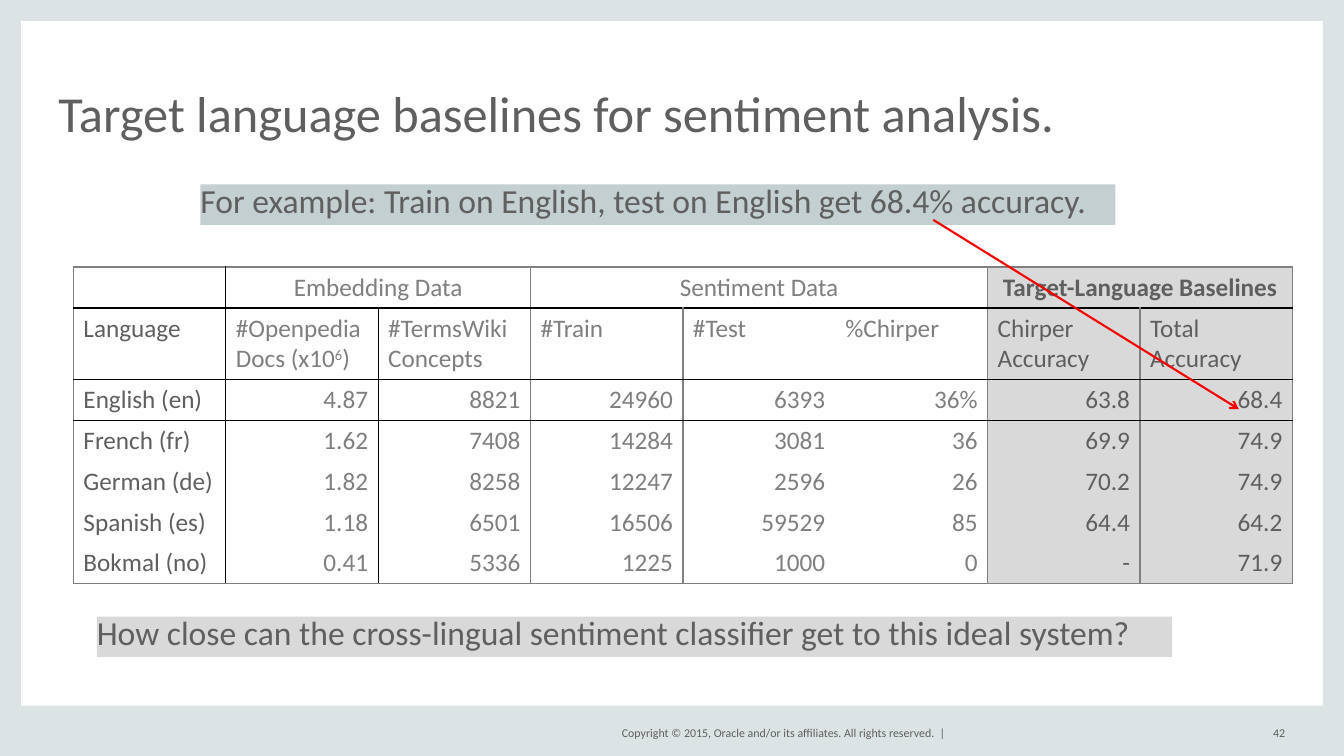
from dataclasses import dataclass
from lxml.etree import SubElement
from pptx import Presentation
from pptx.dml.color import RGBColor
from pptx.enum.shapes import MSO_CONNECTOR, MSO_SHAPE
from pptx.enum.text import MSO_ANCHOR, PP_ALIGN
from pptx.oxml import parse_xml
from pptx.oxml.ns import nsdecls, qn
from pptx.util import Cm, Pt


@dataclass
class Theme:
    font: str = "Calibri"
    frame: str = "DCE3E4"
    ink: str = "5F5F5F"
    soft: str = "7F7F7F"
    teal: str = "C3CFD0"
    shade: str = "D9D9D9"
    gray: str = "808080"
    black: str = "000000"
    red: str = "F80000"
    title: float = 36
    note: float = 24
    body: float = 18
    foot: float = 8.5


look = Theme()

WIDE, HIGH = 33.87, 19.05
EDGE, FOOT = 0.53, 1.27
TITLE = "Target language baselines for sentiment analysis."
RIGHTS = "Copyright © 2015, Oracle and/or its affiliates. All rights reserved.  |"
NUMBER = "42"
NOTES = [
    ("For example: Train on English, test on English get 68.4% accuracy.",
     (5.05, 4.65, 23.06, 1.02), look.teal),
    ("How close can the cross-lingual sentiment classifier get to this ideal system?",
     (2.44, 15.54, 27.1, 1.02), look.shade),
]
GROUPS = [("Embedding Data", 1, 2), ("Sentiment Data", 3, 5),
          ("Target-Language Baselines", 6, 7)]
HEADS = ["Language", "#Openpedia Docs (x10^6^)", "#TermsWiki Concepts", "#Train",
         "#Test", "%Chirper", "Chirper Accuracy", "Total Accuracy"]
SCORES = [
    ["English (en)", "4.87", "8821", "24960", "6393", "36%", "63.8", "68.4"],
    ["French (fr)", "1.62", "7408", "14284", "3081", "36", "69.9", "74.9"],
    ["German (de)", "1.82", "8258", "12247", "2596", "26", "70.2", "74.9"],
    ["Spanish (es)", "1.18", "6501", "16506", "59529", "85", "64.4", "64.2"],
    ["Bokmal (no)", "0.41", "5336", "1225", "1000", "0", "-", "71.9"],
]
TABLE = (1.85, 6.73)
COLUMN, ROW, TALL = 3.84, 1.03, 1.8
BASE = 6
UPRIGHT = [look.gray, look.black, look.black, look.gray, look.gray,
           None, look.gray, look.gray, look.gray]
LEVEL = [look.gray, look.black, look.black, look.black, None, None, None, look.gray]
ARROW = (23.52, 5.54, 31.22, 10.31)


def style(par, size, color, bold=False):
    for run in par.runs:
        run.font.name = look.font
        run.font.size = Pt(size)
        run.font.bold = bold
        run.font.color.rgb = RGBColor.from_string(color)


def block(slide, box, color):
    shape = slide.shapes.add_shape(MSO_SHAPE.RECTANGLE, *map(Cm, box))
    shape.shadow.inherit = False
    shape.fill.solid()
    shape.fill.fore_color.rgb = RGBColor.from_string(color)
    shape.line.fill.background()
    return shape


def write(shape, text, size, anchor, align=PP_ALIGN.LEFT, space=1.0, wrap=True):
    frame = shape.text_frame
    frame.text = text
    frame.word_wrap = wrap
    frame.vertical_anchor = anchor
    frame.margin_left = frame.margin_right = frame.margin_top = frame.margin_bottom = 0
    par = frame.paragraphs[0]
    par.alignment = align
    par.line_spacing = space
    style(par, size, look.ink)


def border(cell, sides):
    props = cell._tc.get_or_add_tcPr()
    for place, (side, color) in enumerate(sides):
        fill = (f'<a:solidFill><a:srgbClr val="{color}"/></a:solidFill>'
                if color else "<a:noFill/>")
        line = parse_xml(f'<a:ln{side} {nsdecls("a")} w="12700">{fill}</a:ln{side}>')
        props.insert(place, line)


def fill_cell(cell, text, row, col):
    par = cell.text_frame.paragraphs[0]
    for part, piece in enumerate(text.split("^")):
        if piece:
            run = par.add_run()
            run.text = piece
            if part == 1:
                run._r.get_or_add_rPr().set("baseline", "30000")
    par.font.size = Pt(look.body)
    if row == 0:
        par.alignment = PP_ALIGN.CENTER
    elif row > 1 and col > 0:
        par.alignment = PP_ALIGN.RIGHT
    color = look.soft if 0 < col < BASE else look.ink
    style(par, look.body, color, row == 0 and col == BASE)
    if col >= BASE:
        cell.fill.solid()
        cell.fill.fore_color.rgb = RGBColor.from_string(look.shade)
    else:
        cell.fill.background()


def add_scores(slide):
    top = [""] * len(HEADS)
    for name, first, last in GROUPS:
        top[first] = name
    data = [top, HEADS] + SCORES
    tall = [TALL if row == 1 else ROW for row in range(len(data))]
    grid = slide.shapes.add_table(len(data), len(HEADS), *map(Cm, TABLE),
                                  Cm(COLUMN * len(HEADS)), Cm(sum(tall))).table
    grid.first_row = grid.horz_banding = False
    for col in grid.columns:
        col.width = Cm(COLUMN)
    for row, high in zip(grid.rows, tall):
        row.height = Cm(high)
    for name, first, last in GROUPS:
        grid.cell(0, first).merge(grid.cell(0, last))
    inner = {col for name, first, last in GROUPS for col in range(first + 1, last + 1)}
    for row, texts in enumerate(data):
        walls = [None if row == 0 and col in inner else color
                 for col, color in enumerate(UPRIGHT)]
        for col, text in enumerate(texts):
            cell = grid.cell(row, col)
            fill_cell(cell, text, row, col)
            span = cell.span_width if cell.is_merge_origin else 1
            border(cell, [("L", walls[col]), ("R", walls[col + span]),
                          ("T", LEVEL[row]), ("B", LEVEL[row + 1])])


def add_arrow(slide):
    arrow = slide.shapes.add_connector(MSO_CONNECTOR.STRAIGHT, *map(Cm, ARROW))
    arrow.line.color.rgb = RGBColor.from_string(look.red)
    arrow.line.width = Pt(1.5)
    SubElement(arrow.line._get_or_add_ln(), qn("a:tailEnd"), type="arrow")
    SubElement(arrow._element.spPr, qn("a:effectLst"))


def main():
    deck = Presentation()
    deck.slide_width, deck.slide_height = Cm(WIDE), Cm(HIGH)
    slide = deck.slides.add_slide(deck.slide_layouts[6])
    for box in [(0, 0, EDGE, HIGH), (WIDE - EDGE, 0, EDGE, HIGH),
                (0, HIGH - FOOT, WIDE, FOOT), (0, 0, WIDE, EDGE)]:
        block(slide, box, look.frame)
    for text, left, width in [(RIGHTS, 14.94, 8.89), (NUMBER, 31.32, 1.07)]:
        foot = slide.shapes.add_textbox(Cm(left), Cm(18.21), Cm(width), Cm(0.51))
        write(foot, text, look.foot, MSO_ANCHOR.MIDDLE, PP_ALIGN.RIGHT, wrap=False)
    title = slide.shapes.add_textbox(Cm(1.47), Cm(1.12), Cm(30.91), Cm(2.46))
    write(title, TITLE, look.title, MSO_ANCHOR.BOTTOM, space=0.8)
    for text, box, color in NOTES:
        write(block(slide, box, color), text, look.note, MSO_ANCHOR.TOP, space=0.9)
    add_scores(slide)
    add_arrow(slide)
    deck.save("out.pptx")


if __name__ == "__main__":
    main()
